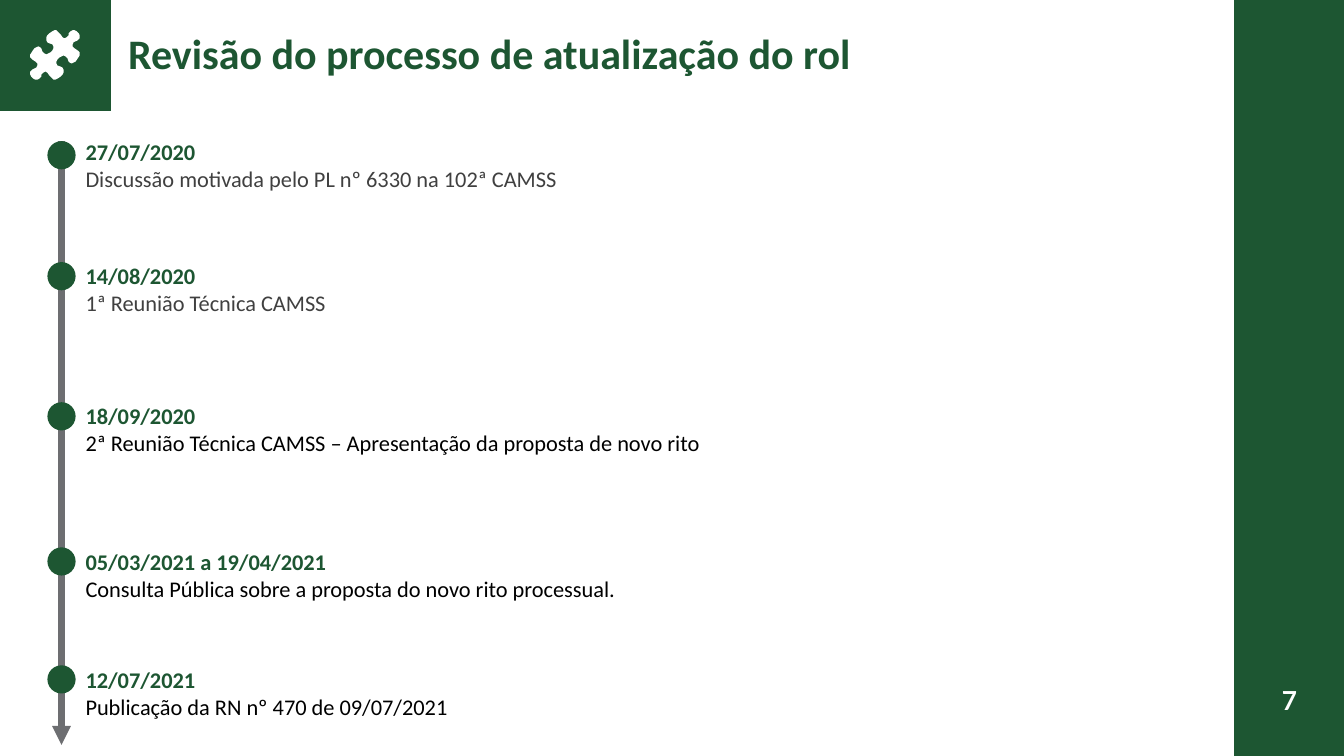
from lxml.etree import SubElement
from pptx import Presentation
from pptx.dml.color import RGBColor
from pptx.enum.shapes import MSO_CONNECTOR, MSO_SHAPE
from pptx.enum.text import MSO_ANCHOR, MSO_AUTO_SIZE, PP_ALIGN
from pptx.oxml.ns import qn
from pptx.util import Inches, Pt

GREEN = RGBColor(0x1D, 0x56, 0x32)
GREY = RGBColor(0x6D, 0x6E, 0x71)
DARK = RGBColor(0x40, 0x40, 0x40)
BLACK = RGBColor(0, 0, 0)
WHITE = RGBColor(0xFF, 0xFF, 0xFF)

# Dot top, text top, date, event, event colour
EVENTS = [
    (1.4, 1.32, "27/07/2020",
     "Discussão motivada pelo PL nº 6330 na 102ª CAMSS", DARK),
    (2.6, 2.55, "14/08/2020", "1ª Reunião Técnica CAMSS", DARK),
    (3.99, 3.94, "18/09/2020",
     "2ª Reunião Técnica CAMSS – Apresentação da proposta de novo rito", BLACK),
    (5.43, 5.39, "05/03/2021 a 19/04/2021",
     "Consulta Pública sobre a proposta do novo rito processual.", BLACK),
    (6.6, 6.56, "12/07/2021", "Publicação da RN nº 470 de 09/07/2021", BLACK),
]

# Half of the puzzle piece, in hundredths of an inch
HALF = [
    (54, 30), (52, 31), (49, 33), (47, 35), (46, 37), (46, 40), (47, 42),
    (49, 43), (52, 44), (53, 46), (53, 48), (52, 50), (50, 52), (48, 53),
    (46, 54), (44, 53), (42, 51), (41, 48), (40, 47), (38, 46), (36, 47),
    (34, 48), (32, 51), (30, 54), (30, 57), (32, 59), (35, 61), (37, 63),
    (37, 65), (36, 67), (34, 68), (32, 69), (30, 71), (30, 74), (31, 76),
    (33, 78), (35, 79), (37, 79), (39, 78), (41, 76), (41, 74), (43, 72),
    (45, 71), (47, 72), (49, 75), (51, 77), (53, 79),
]


class Deck:
    def __init__(self):
        self.prs = Presentation()
        self.prs.slide_width = Inches(13.33)
        self.prs.slide_height = Inches(7.5)
        self.font = "Calibri"
        self.slide = self.prs.slides.add_slide(self.prs.slide_layouts[5])
        self.shapes = self.slide.shapes

    def paint(self, shape, color):
        shape.shadow.inherit = False
        shape.fill.solid()
        shape.fill.fore_color.rgb = color
        shape.line.fill.background()

    def shape(self, kind, x, y, w, h, color=GREEN):
        item = self.shapes.add_shape(
            kind, Inches(x), Inches(y), Inches(w), Inches(h))
        self.paint(item, color)

    def arrow(self, x, top, end, color, width):
        line = self.shapes.add_connector(
            MSO_CONNECTOR.STRAIGHT, Inches(x), Inches(top), Inches(x), Inches(end))
        line.line.color.rgb = color
        line.line.width = Pt(width)
        props = line._element.spPr
        SubElement(props.find(qn("a:ln")), qn("a:tailEnd"), type="triangle")
        SubElement(props, qn("a:effectLst"))

    def run(self, para, text, size, color, bold=False, font=None):
        run = para.add_run()
        run.text = text
        run.font.name = font or self.font
        run.font.size = Pt(size)
        run.font.bold = bold
        run.font.color.rgb = color

    def box(self, x, y, w, h):
        frame = self.shapes.add_textbox(
            Inches(x), Inches(y), Inches(w), Inches(h)).text_frame
        frame.word_wrap = True
        return frame

    def center(self, frame):
        """Remove the insets and anchor the text in the middle."""
        frame.margin_left = frame.margin_right = 0
        frame.margin_top = frame.margin_bottom = 0
        frame.vertical_anchor = MSO_ANCHOR.MIDDLE
        frame.auto_size = MSO_AUTO_SIZE.NONE

    def title(self, text):
        title = self.shapes.title
        title.left, title.top = Inches(1.27), 0
        title.width, title.height = Inches(10.8), Inches(1.1)
        self.center(title.text_frame)
        para = title.text_frame.paragraphs[0]
        para.alignment = PP_ALIGN.LEFT
        para.line_spacing = 0.9
        self.run(para, text, 30, GREEN, True)

    def number(self, text):
        frame = self.box(12.24, 6.4, 1.1, 1.1)
        self.center(frame)
        para = frame.paragraphs[0]
        para.alignment = PP_ALIGN.CENTER
        self.run(para, text, 18.7, WHITE, True, "Lato")

    def event(self, dot, top, date, text, color):
        self.shape(MSO_SHAPE.OVAL, 0.47, dot, 0.28, 0.28)
        frame = self.box(0.75, top, 10.4, 0.64)
        frame.auto_size = MSO_AUTO_SIZE.SHAPE_TO_FIT_TEXT
        para = frame.paragraphs[0]
        self.run(para, date, 16, GREEN, True)
        para.add_line_break()
        self.run(para, text, 16, color)

    def puzzle(self):
        """Draw the piece: its second half is the first, turned by 180 degrees."""
        points = HALF + [(109 - x, 109 - y) for x, y in HALF]
        form = self.shapes.build_freeform(*points[0], scale=Inches(0.01))
        form.add_line_segments(points[1:], close=True)
        self.paint(form.convert_to_shape(), WHITE)


def main():
    deck = Deck()
    deck.shape(MSO_SHAPE.RECTANGLE, 12.24, 0, 1.09, 7.5)
    deck.shape(MSO_SHAPE.RECTANGLE, 0, 0, 1.1, 1.1)
    deck.title("Revisão do processo de atualização do rol")
    deck.puzzle()
    deck.arrow(0.61, 1.4, 7.39, GREY, 4.5)
    for event in EVENTS:
        deck.event(*event)
    deck.number("7")
    deck.prs.save("out.pptx")


if __name__ == "__main__":
    main()
